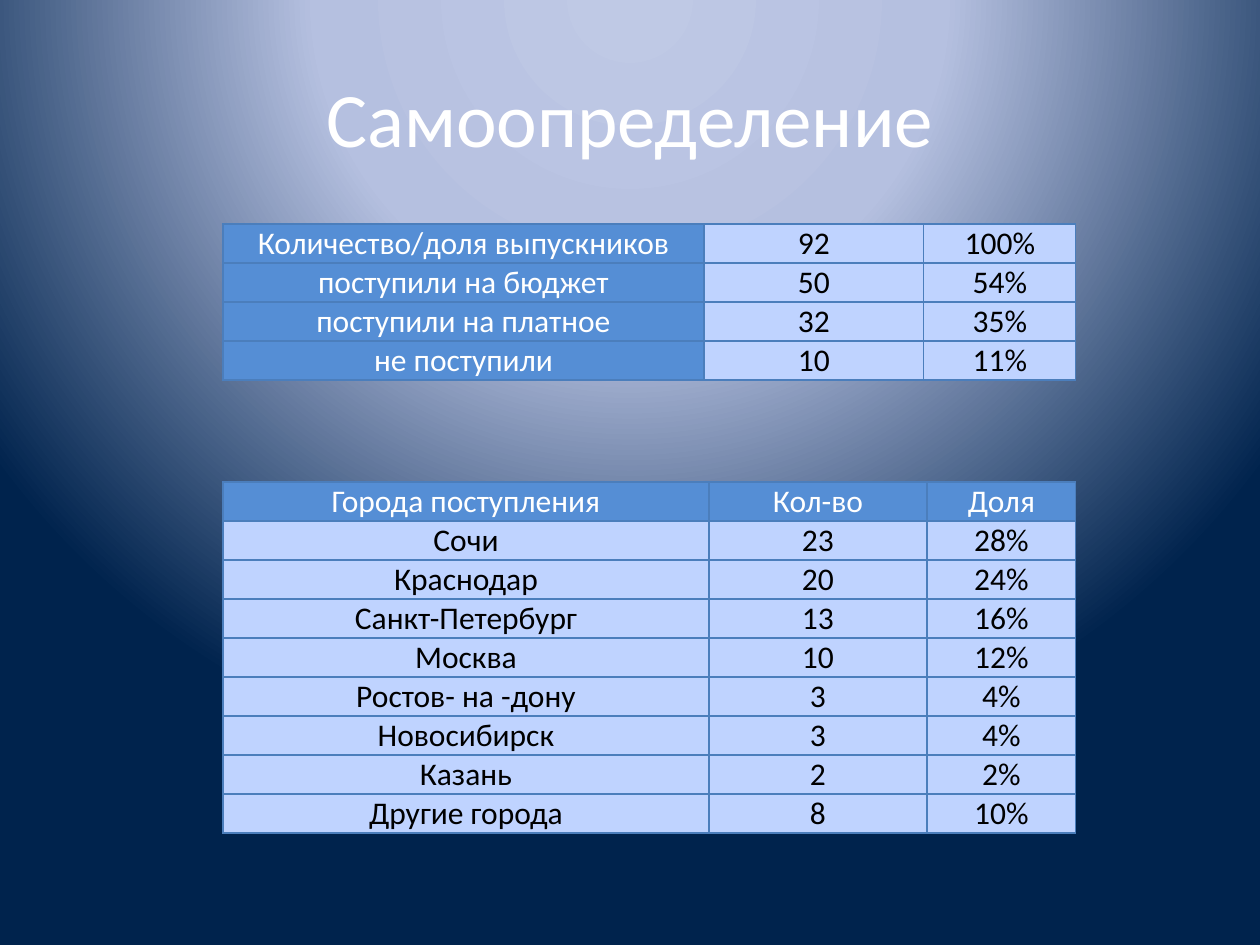
from pptx import Presentation
from pptx.dml.color import RGBColor
from pptx.enum.text import MSO_ANCHOR, PP_ALIGN
from pptx.oxml import parse_xml
from pptx.oxml.ns import nsdecls
from pptx.util import Emu, Pt

PX_PER_INCH = 126
WHITE, BLACK = "FFFFFF", "000000"
HEADER, BODY, BORDER = "558ED5", "BFD3FF", "4B7EBC"

GRADUATES = [
    ("Количество/доля выпускников", "92", "100%"),
    ("поступили на бюджет", "50", "54%"),
    ("поступили на платное", "32", "35%"),
    ("не поступили", "10", "11%"),
]
CITIES = [
    ("Города поступления", "Кол-во", "Доля"),
    ("Сочи", "23", "28%"),
    ("Краснодар", "20", "24%"),
    ("Санкт-Петербург", "13", "16%"),
    ("Москва", "10", "12%"),
    ("Ростов- на -дону", "3", "4%"),
    ("Новосибирск", "3", "4%"),
    ("Казань", "2", "2%"),
    ("Другие города", "8", "10%"),
]


def px(length):
    return Emu(round(length * 914400 / PX_PER_INCH))


def rgb(color):
    return RGBColor.from_string(color)


def write(frame, text, size=18, color=BLACK, font="Calibri", align=PP_ALIGN.CENTER):
    para = frame.paragraphs[0]
    para.alignment = align
    span = para.add_run()
    span.text = text
    span.font.size = Pt(size)
    span.font.name = font
    span.font.color.rgb = rgb(color)


def add_borders(cell, color, width):
    properties = cell._tc.get_or_add_tcPr()
    for index, side in enumerate("LRTB"):
        properties.insert(index, parse_xml(
            f'<a:ln{side} {nsdecls("a")} w="{Pt(width)}"><a:solidFill>'
            f'<a:srgbClr val="{color}"/></a:solidFill></a:ln{side}>'))


class SlideBuilder:
    """Holds the table style and the slide being filled."""

    row_height = 39
    inset = 1
    border_width = 0.75

    def __init__(self, page):
        self.page = page

    def background(self, stops):
        """Paint a radial gradient centred above the slide."""
        marks = "".join(
            f'<a:gs pos="{percent * 1000}"><a:srgbClr val="{color}"/></a:gs>'
            for percent, color in stops)
        self.page.element.cSld.insert(0, parse_xml(
            f'<p:bg {nsdecls("p", "a")}><p:bgPr><a:gradFill rotWithShape="1">'
            f'<a:gsLst>{marks}</a:gsLst><a:path path="circle">'
            '<a:fillToRect l="50000" t="-80000" r="50000" b="180000"/></a:path>'
            '</a:gradFill><a:effectLst/></p:bgPr></p:bg>'))

    def title(self, text, left, top, width, height):
        box = self.page.shapes.add_textbox(px(left), px(top), px(width), px(height))
        frame = box.text_frame
        frame.word_wrap = True
        frame.vertical_anchor = MSO_ANCHOR.MIDDLE
        write(frame, text, size=44, color=WHITE)

    def table(self, rows, left, top, widths, is_header):
        """Add a table; is_header(row, column) picks the dark cells."""
        table = self.page.shapes.add_table(
            len(rows), len(widths), px(left), px(top),
            px(sum(widths)), px(self.row_height * len(rows))).table
        table.first_row = table.horz_banding = False
        for column, width in zip(table.columns, widths):
            column.width = px(width)
        for r, values in enumerate(rows):
            table.rows[r].height = px(self.row_height)
            for c, value in enumerate(values):
                self.cell(table.cell(r, c), value, is_header(r, c))

    def cell(self, cell, text, header):
        cell.margin_left = cell.margin_right = cell.margin_top = px(self.inset)
        cell.margin_bottom = 0
        cell.vertical_anchor = MSO_ANCHOR.BOTTOM
        cell.fill.solid()
        cell.fill.fore_color.rgb = rgb(HEADER if header else BODY)
        add_borders(cell, BORDER, self.border_width)
        write(cell.text_frame, text, color=WHITE if header else BLACK)


def main():
    deck = Presentation()
    deck.slide_width, deck.slide_height = px(1260), px(945)
    builder = SlideBuilder(deck.slides.add_slide(deck.slide_layouts[6]))
    builder.background([(0, "BFC9E5"), (40, "B5C0E0"), (100, "00234D")])
    builder.title("Самоопределение", 63, 38, 1134, 157)
    builder.table(GRADUATES, 223, 224, [481, 220, 152], lambda row, column: column == 0)
    builder.table(CITIES, 223, 482, [486, 218, 149], lambda row, column: row == 0)
    deck.save("out.pptx")


if __name__ == "__main__":
    main()
